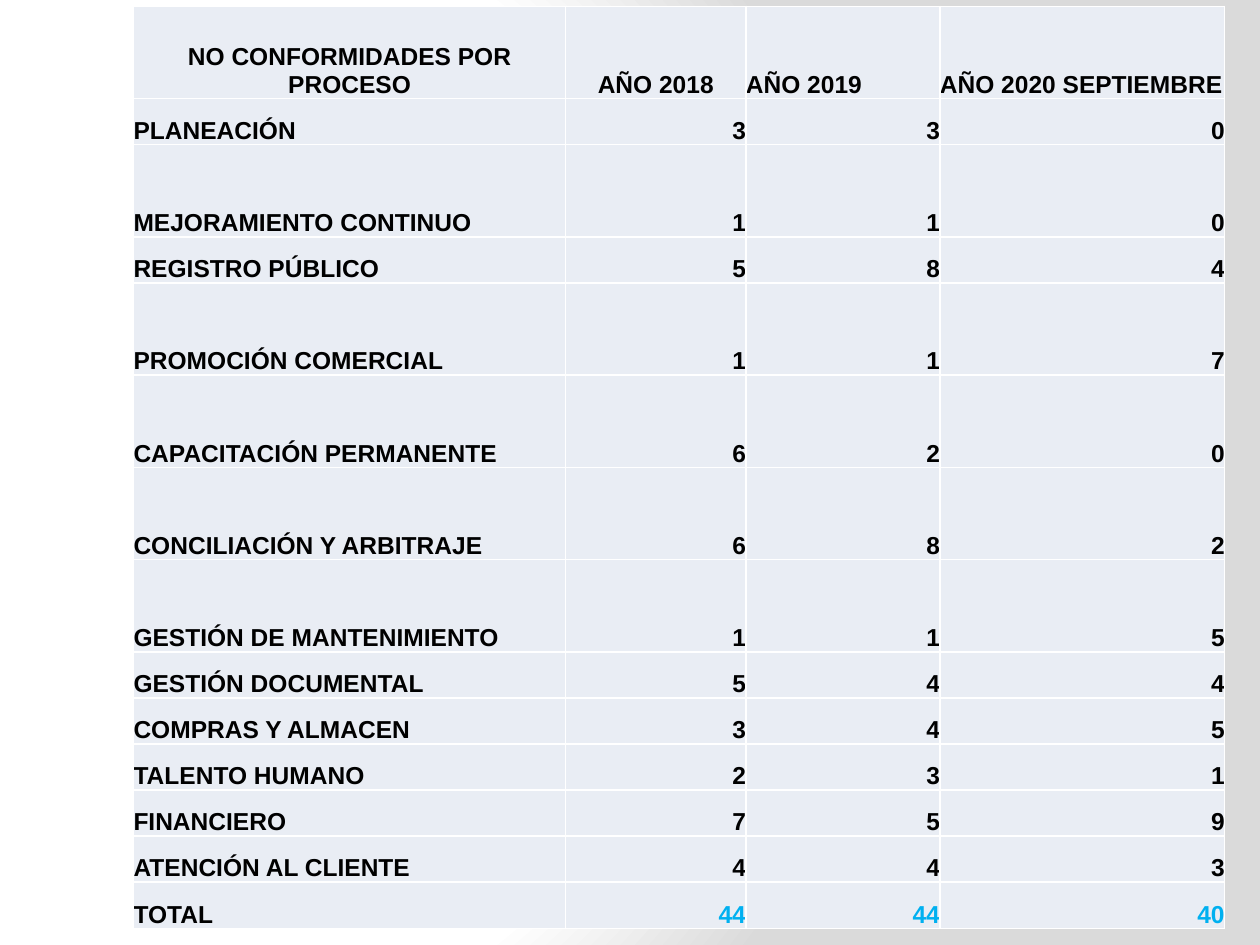
from pptx import Presentation
from pptx import util as u
from pptx.dml.color import RGBColor
from pptx.enum import text
from pptx.oxml import parse_xml
from pptx.oxml.ns import nsdecls

HEADINGS = ["NO CONFORMIDADES POR PROCESO", "AÑO 2018", "AÑO 2019", "AÑO 2020 SEPTIEMBRE"]
PROCESSES = [
    ("PLANEACIÓN", 3, 3, 0),
    ("MEJORAMIENTO CONTINUO", 1, 1, 0),
    ("REGISTRO PÚBLICO", 5, 8, 4),
    ("PROMOCIÓN COMERCIAL", 1, 1, 7),
    ("CAPACITACIÓN PERMANENTE", 6, 2, 0),
    ("CONCILIACIÓN Y ARBITRAJE", 6, 8, 2),
    ("GESTIÓN DE MANTENIMIENTO", 1, 1, 5),
    ("GESTIÓN DOCUMENTAL", 5, 4, 4),
    ("COMPRAS Y ALMACEN", 3, 4, 5),
    ("TALENTO HUMANO", 2, 3, 1),
    ("FINANCIERO", 7, 5, 9),
    ("ATENCIÓN AL CLIENTE", 4, 4, 3),
]
TOTALS = ("TOTAL", *(sum(year) for year in list(zip(*PROCESSES))[1:]))
COLUMN_WIDTHS = [3.43, 1.43, 1.54, 2.26]
ROW_UNITS = [2, 1, 2, 1, 2, 2, 2, 2, 1, 1, 1, 1, 1, 1]
BLACK, WHITE, BLUE, PALE = "000000", "FFFFFF", "00B0F0", "E9EDF4"


def color(value):
    return RGBColor.from_string(value)


def paint_background(slide):
    slide.background.fill.solid()
    properties = slide.element.xpath(".//p:bgPr")[0]
    stops = "".join(
        f'<a:gs pos="{position * 1000}"><a:srgbClr val="{value}"/></a:gs>'
        for position, value in [(0, WHITE), (75, WHITE), (100, "DADADA")]
    )
    gradient = parse_xml(
        f'<a:gradFill {nsdecls("a")} rotWithShape="1"><a:gsLst>{stops}</a:gsLst>'
        '<a:path path="circle"><a:fillToRect l="20000" t="50000" r="100000" b="50000"/>'
        "</a:path></a:gradFill>"
    )
    properties.replace(properties[0], gradient)


def add_borders(cell):
    properties = cell._tc.get_or_add_tcPr()
    for index, side in enumerate(["lnL", "lnR", "lnT", "lnB"]):
        border = parse_xml(
            f'<a:{side} {nsdecls("a")} w="{u.Pt(1)}"><a:solidFill>'
            f'<a:srgbClr val="{WHITE}"/></a:solidFill></a:{side}>'
        )
        properties.insert(index, border)


def fill_cell(cell, content, alignment, font_color):
    cell.margin_left = cell.margin_right = cell.margin_top = cell.margin_bottom = 0
    cell.vertical_anchor = text.MSO_ANCHOR.BOTTOM
    cell.fill.solid()
    cell.fill.fore_color.rgb = color(PALE)
    add_borders(cell)
    cell.text = str(content)
    paragraph = cell.text_frame.paragraphs[0]
    paragraph.alignment = alignment
    paragraph.font.name = "Arial"
    paragraph.font.size = u.Pt(14)
    paragraph.font.bold = True
    paragraph.font.color.rgb = color(font_color)


def add_nonconformities(slide, left, top, width, height):
    records = [HEADINGS, *PROCESSES, TOTALS]
    table = slide.shapes.add_table(
        len(records), len(HEADINGS), left, top, width, height
    ).table
    table.first_row = table.horz_banding = False
    for column, inches in zip(table.columns, COLUMN_WIDTHS):
        column.width = u.Inches(inches)
    for row, units in zip(table.rows, ROW_UNITS):
        row.height = int(height * units / sum(ROW_UNITS))

    align = text.PP_ALIGN
    heading_alignments = [align.CENTER, align.CENTER, align.LEFT, align.LEFT]
    value_alignments = [align.LEFT] + [align.RIGHT] * 3
    for r, record in enumerate(records):
        alignments = value_alignments if r else heading_alignments
        for c, content in enumerate(record):
            font_color = BLUE if record is TOTALS and c else BLACK
            fill_cell(table.cell(r, c), content, alignments[c], font_color)


def main():
    deck = Presentation()
    deck.slide_width, deck.slide_height = u.Inches(10), u.Inches(7.5)
    slide = deck.slides.add_slide(deck.slide_layouts[6])
    paint_background(slide)
    add_nonconformities(
        slide, u.Inches(1.06), u.Inches(0.05), u.Inches(8.66), u.Inches(7.32)
    )
    deck.save("out.pptx")


if __name__ == "__main__":
    main()
